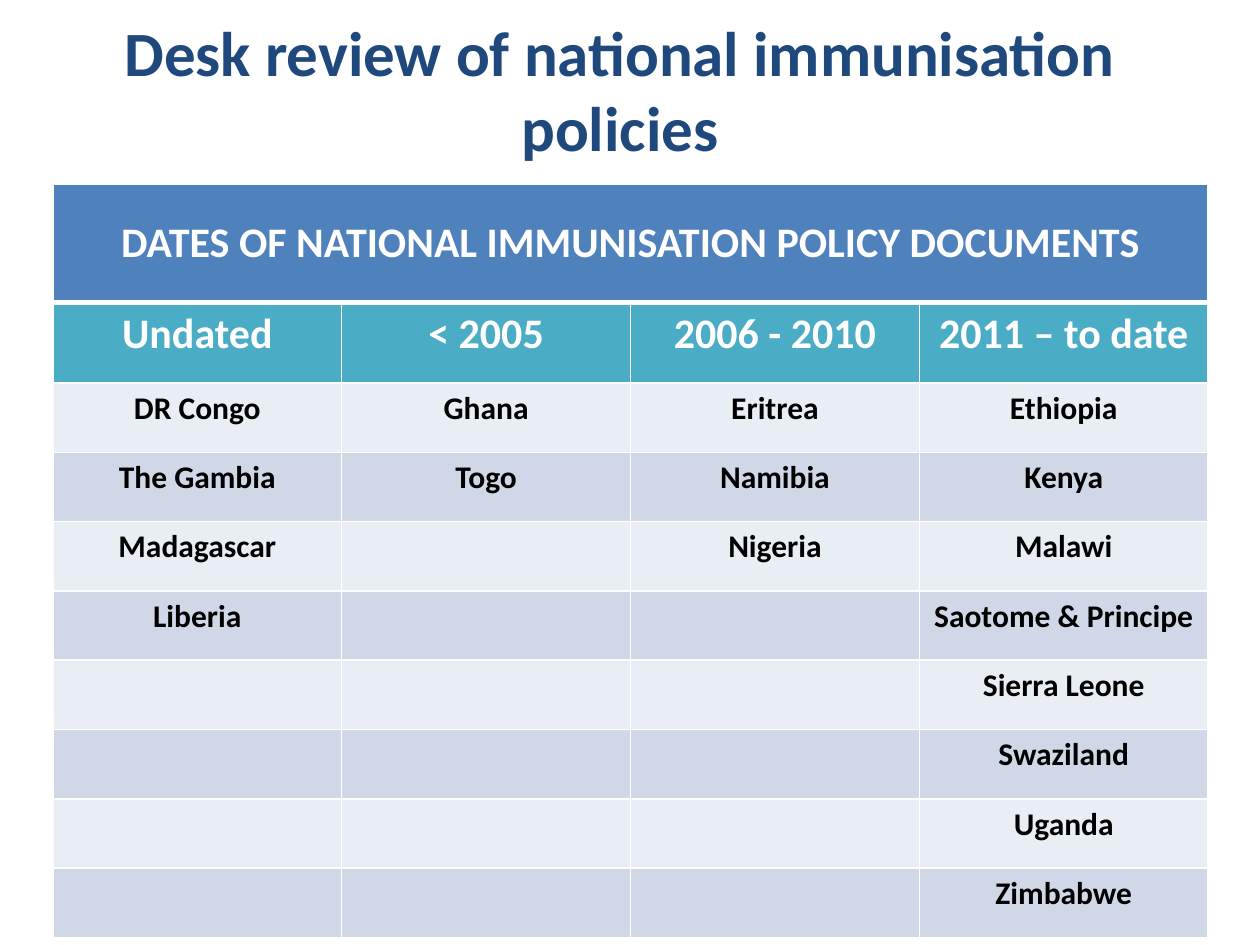
from dataclasses import dataclass
from itertools import zip_longest

from lxml.etree import SubElement
from pptx import Presentation
from pptx.dml.color import RGBColor
from pptx.enum.text import MSO_ANCHOR as Anchor, PP_ALIGN as Align
from pptx.oxml.ns import qn
from pptx.util import Inches, Pt


@dataclass(frozen=True)
class Theme:
    font: str = "Calibri"
    title_color: str = "1F497D"
    banner_fill: str = "4F81BD"
    period_fill: str = "4BACC6"
    band_fills: tuple = ("E9EDF4", "D0D8E8")
    light: str = "FFFFFF"
    dark: str = "000000"
    title_size: int = 36
    heading_size: int = 24
    country_size: int = 18
    thin_line: int = 1
    banner_line: int = 3


THEME = Theme()
WIDTH, HEIGHT = 10, 7.5
LEFT = 0.42
TABLE_TOP, TABLE_WIDTH = 1.46, 9.17
BANNER_HEIGHT, PERIOD_HEIGHT, COUNTRY_HEIGHT = 0.94, 0.64, 0.55

TITLE = "Desk review of national immunisation policies"
BANNER = "DATES OF NATIONAL IMMUNISATION POLICY DOCUMENTS"
COUNTRIES = {
    "Undated": ["DR Congo", "The Gambia", "Madagascar", "Liberia"],
    "< 2005": ["Ghana", "Togo"],
    "2006 - 2010": ["Eritrea", "Namibia", "Nigeria"],
    "2011 – to date": ["Ethiopia", "Kenya", "Malawi", "Saotome & Principe",
                       "Sierra Leone", "Swaziland", "Uganda", "Zimbabwe"],
}


def write_text(frame, text, size, color):
    paragraph = frame.paragraphs[0]
    paragraph.text = text
    paragraph.alignment = Align.CENTER
    font_format = {"name": THEME.font, "size": Pt(size), "bold": True}
    fonts = [paragraph.font] + [run.font for run in paragraph.runs]
    for font in fonts:
        for name, value in font_format.items():
            setattr(font, name, value)
        font.color.rgb = RGBColor.from_string(color)


def add_title(slide):
    box = slide.shapes.add_textbox(
        Inches(LEFT), Inches(0.08), Inches(0.9 * WIDTH), Inches(HEIGHT / 6))
    frame = box.text_frame
    frame.word_wrap = True
    frame.vertical_anchor = Anchor.MIDDLE
    write_text(frame, TITLE, THEME.title_size, THEME.title_color)


def set_borders(cell, top, bottom):
    """Draw light borders; top and bottom are widths in points."""
    properties = cell._tc.get_or_add_tcPr()
    widths = {"lnL": THEME.thin_line, "lnR": THEME.thin_line,
              "lnT": top, "lnB": bottom}
    for side, width in widths.items():
        line = SubElement(properties, qn(f"a:{side}"), w=str(Pt(width)))
        fill = SubElement(line, qn("a:solidFill"))
        SubElement(fill, qn("a:srgbClr"), val=THEME.light)


def fill_row(table, index, texts, fill, size, color):
    top = THEME.banner_line if index == 1 else THEME.thin_line
    bottom = THEME.banner_line if index == 0 else THEME.thin_line
    for cell, text in zip(table.rows[index].cells, texts):
        set_borders(cell, top, bottom)
        cell.fill.solid()
        cell.fill.fore_color.rgb = RGBColor.from_string(fill)
        write_text(cell.text_frame, text, size, color)


def add_policy_table(slide):
    country_rows = list(zip_longest(*COUNTRIES.values(), fillvalue=""))
    columns = len(COUNTRIES)
    heights = [BANNER_HEIGHT, PERIOD_HEIGHT]
    heights += [COUNTRY_HEIGHT] * len(country_rows)
    table = slide.shapes.add_table(
        len(heights), columns, Inches(LEFT), Inches(TABLE_TOP),
        Inches(TABLE_WIDTH), Inches(sum(heights))).table
    for row, height in zip(table.rows, heights):
        row.height = Inches(height)

    banner = table.cell(0, 0)
    banner.merge(table.cell(0, columns - 1))
    fill_row(table, 0, [BANNER] + [""] * (columns - 1),
             THEME.banner_fill, THEME.heading_size, THEME.light)
    banner.vertical_anchor = Anchor.MIDDLE
    fill_row(table, 1, COUNTRIES,
             THEME.period_fill, THEME.heading_size, THEME.light)
    for number, names in enumerate(country_rows):
        fill_row(table, number + 2, names, THEME.band_fills[number % 2],
                 THEME.country_size, THEME.dark)


def main():
    presentation = Presentation()
    presentation.slide_width = Inches(WIDTH)
    presentation.slide_height = Inches(HEIGHT)
    slide = presentation.slides.add_slide(presentation.slide_layouts[6])
    add_title(slide)
    add_policy_table(slide)
    presentation.save("out.pptx")


if __name__ == "__main__":
    main()
